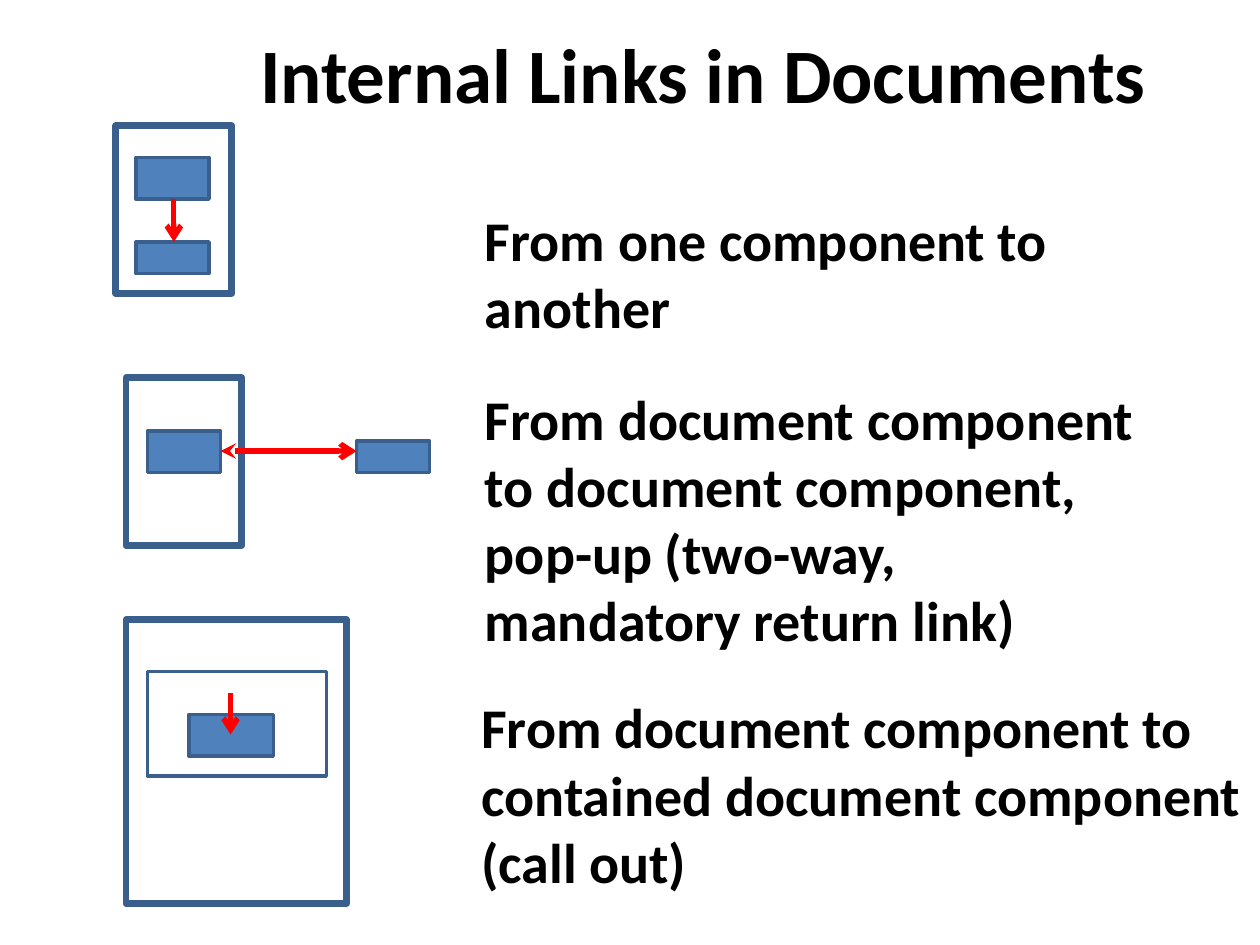
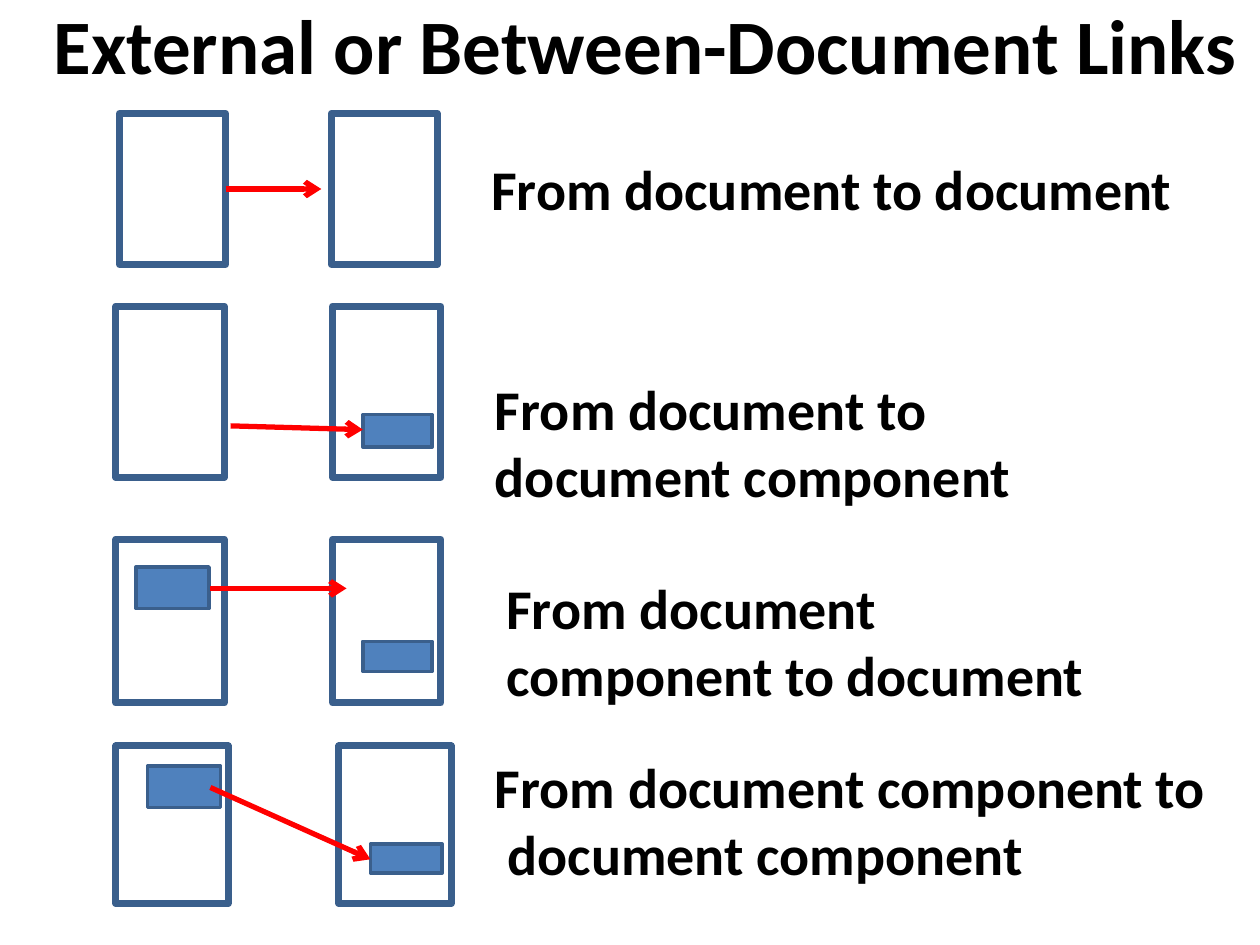
from pptx import Presentation
from pptx.dml.color import RGBColor
from pptx.enum.shapes import MSO_CONNECTOR as CONN, MSO_SHAPE as SHAPE
from pptx.enum.text import MSO_AUTO_SIZE as AUTO, PP_ALIGN as ALIGN
from pptx.oxml.ns import qn
from pptx.util import Inches, Pt
from lxml.etree import SubElement

# Shared look
FONT = "Calibri"
BLACK, BLUE, EDGE, RED = "000000", "4F81BD", "3A5F8C", "FF0000"
TITLE_SIZE, CAPTION_SIZE = 44, 32


def rgb(color):
    return RGBColor.from_string(color)


def add_rect(s, x, y, w, h, line_width, fill=None):
    sp = s.shapes.add_shape(SHAPE.RECTANGLE, Inches(x), Inches(y), Inches(w), Inches(h))
    sp.shadow.inherit = False
    if fill:
        sp.fill.solid()
        sp.fill.fore_color.rgb = rgb(fill)
    else:
        sp.fill.background()
    sp.line.color.rgb = rgb(EDGE)
    sp.line.width = Pt(line_width)


def add_document(s, x, y, w, h):
    add_rect(s, x, y, w, h, 4)


def add_component(s, x, y, w=0.58, h=0.33):
    add_rect(s, x, y, w, h, 2, BLUE)


def add_link(s, x1, y1, x2, y2, two_way=False):
    link = s.shapes.add_connector(CONN.STRAIGHT, Inches(x1), Inches(y1), Inches(x2), Inches(y2))
    link.line.color.rgb = rgb(RED)
    link.line.width = Pt(3)
    ln = link.line._get_or_add_ln()
    if two_way:
        SubElement(ln, qn("a:headEnd")).set("type", "stealth")
    SubElement(ln, qn("a:tailEnd")).set("type", "arrow")
    SubElement(link._element.spPr, qn("a:effectLst"))


def add_text(s, x, y, w, h, lines, size):
    tf = s.shapes.add_textbox(Inches(x), Inches(y), Inches(w), Inches(h)).text_frame
    tf.word_wrap = True
    p = tf.paragraphs[0]
    for i, line in enumerate(lines):
        if i:
            p.add_line_break()
        r = p.add_run()
        r.text = line
        r.font.name, r.font.size, r.font.bold = FONT, Pt(size), True
        r.font.color.rgb = rgb(BLACK)
    return tf


def add_title(s, x, y, w, title):
    p = add_text(s, x, y, w, 1.3, [title], TITLE_SIZE).paragraphs[0]
    p.alignment = ALIGN.CENTER
    p.line_spacing = 0.92


def add_caption(s, x, y, w, h, *lines):
    tf = add_text(s, x, y, w, h, lines, CAPTION_SIZE)
    tf.auto_size = AUTO.SHAPE_TO_FIT_TEXT


def add_document_pair(s, left, right, y, w, h):
    for x in (left, right):
        add_document(s, x, y, w, h)


def internal_links(s):
    add_title(s, 1.67, 0.23, 7.83, "Internal Links in Documents")

    # Component to component
    add_document(s, 0.92, 1, 0.92, 1.33)
    add_component(s, 1.08, 1.25)
    add_component(s, 1.08, 1.92, h=0.25)
    add_link(s, 1.38, 1.58, 1.38, 1.92)
    add_caption(s, 3.75, 1.58, 4.75, 1.18, "From one component to another")

    # Pop-up with return link
    add_document(s, 1, 3, 0.92, 1.33)
    add_component(s, 1.17, 3.42)
    add_component(s, 2.83, 3.5, h=0.25)
    add_link(s, 1.75, 3.58, 2.83, 3.58, two_way=True)
    add_caption(s, 3.75, 3, 5.67, 2.26,
                "From document component to document component, pop-up (two-way,",
                "mandatory return link)")

    # Call out inside a component
    add_document(s, 1, 4.92, 1.75, 2.25)
    add_rect(s, 1.17, 5.33, 1.42, 0.83, 2)
    add_component(s, 1.5, 5.67, w=0.67)
    add_link(s, 1.83, 5.5, 1.83, 5.83)
    add_caption(s, 3.72, 5.45, 7.08, 1.72, "From document component to",
                "contained document component (call out)")


def external_links(s):
    add_title(s, 0.25, 0, 9.75, "External or Between-Document Links")

    # Document to document
    add_document_pair(s, 0.95, 2.63, 0.9, 0.84, 1.2)
    add_link(s, 1.79, 1.5, 2.55, 1.5)
    add_caption(s, 3.8, 1.18, 6.17, 0.64, "From document to document")

    # Document to component
    add_document_pair(s, 0.92, 2.64, 2.43, 0.86, 1.36)
    add_component(s, 2.88, 3.29, 0.55, 0.26)
    add_link(s, 1.83, 3.38, 2.88, 3.41)
    add_caption(s, 3.83, 2.92, 5.25, 1.18, "From document to document component")

    # Component to document
    add_document_pair(s, 0.92, 2.64, 4.28, 0.86, 1.3)
    add_component(s, 1.08, 4.5)
    add_component(s, 2.88, 5.09, 0.55, 0.24)
    add_link(s, 1.67, 4.67, 2.75, 4.67)
    add_caption(s, 3.92, 4.5, 5.08, 1.18, "From document component to document")

    # Component to component
    add_document_pair(s, 0.92, 2.69, 5.92, 0.89, 1.25)
    add_component(s, 1.17, 6.08)
    add_component(s, 2.94, 6.7, 0.57, 0.23)
    add_link(s, 1.67, 6.25, 2.94, 6.82)
    add_caption(s, 3.83, 5.92, 6.33, 1.18, "From document component to",
                " document component")


def main():
    prs = Presentation()
    prs.slide_width, prs.slide_height = Inches(10), Inches(7.5)
    for build in (internal_links, external_links):
        build(prs.slides.add_slide(prs.slide_layouts[6]))
    prs.save("out.pptx")


if __name__ == "__main__":
    main()
